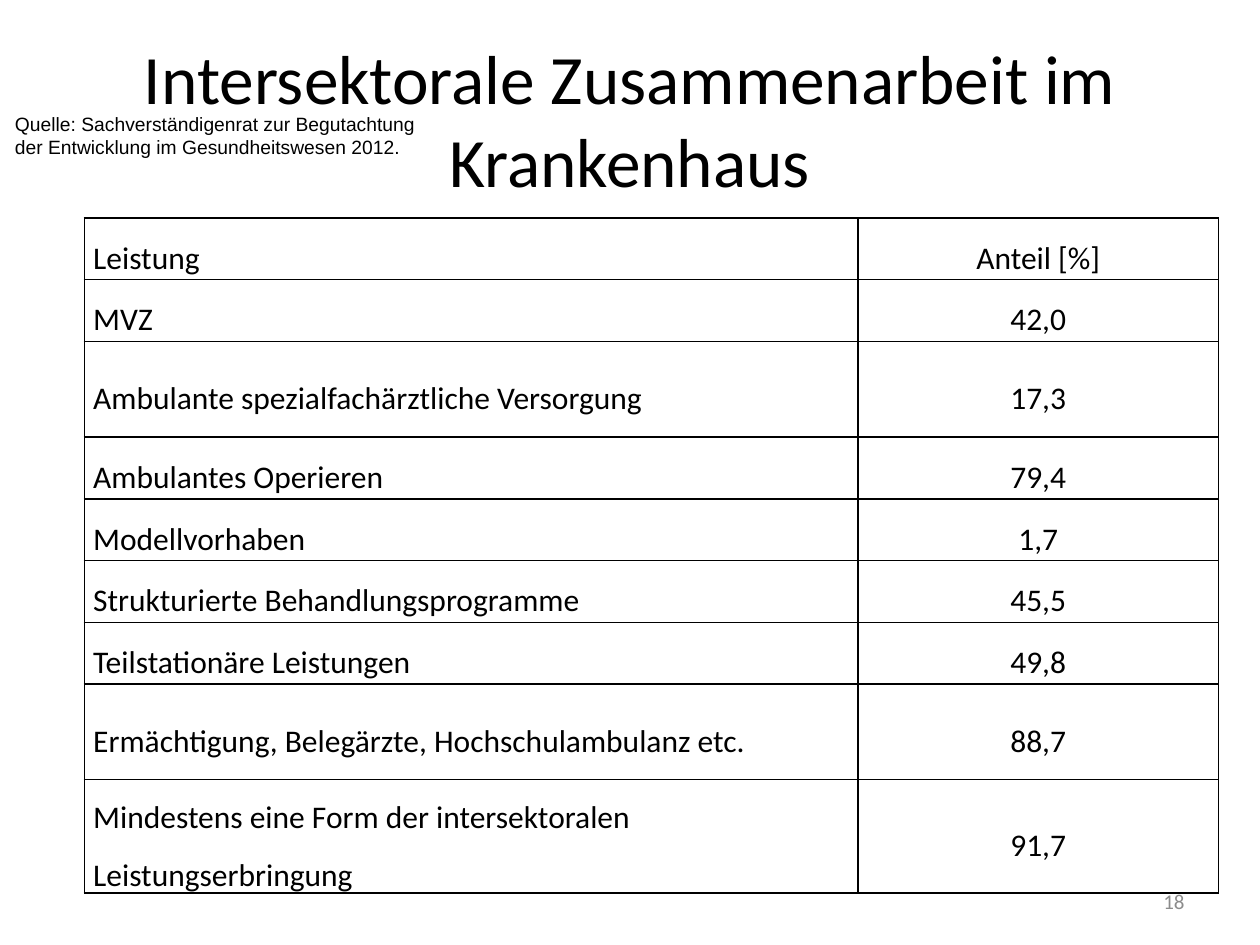
from lxml import etree
from pptx import Presentation
from pptx.dml.color import RGBColor
from pptx.enum.text import MSO_ANCHOR, PP_ALIGN
from pptx.oxml.ns import qn
from pptx.util import Inches, Pt

LEFT, MID, RIGHT = PP_ALIGN.LEFT, PP_ALIGN.CENTER, PP_ALIGN.RIGHT
TOP, CENTRE = MSO_ANCHOR.TOP, MSO_ANCHOR.MIDDLE
COLORS = {"ink": "000000", "grey": "8C8C8C"}

deck = Presentation()
deck.slide_width, deck.slide_height = Inches(10), Inches(7.5)
W, H = deck.slide_width, deck.slide_height
slide = deck.slides.add_slide(deck.slide_layouts[6])


def style(para, size, align, face="Calibri", color="ink"):
    para.alignment = align
    para.font.size = Pt(size)
    para.font.name = face
    para.font.color.rgb = RGBColor.from_string(COLORS[color])


def label(text, box, anchor, *look):
    """Add a text box; box is given in shares of the slide's size."""
    x, y, w, h = box
    frame = slide.shapes.add_textbox(
        int(x * W), int(y * H), int(w * W), int(h * H)).text_frame
    frame.word_wrap = True
    frame.vertical_anchor = anchor
    frame.text = text
    style(frame.paragraphs[0], *look)


# Title
label("Intersektorale Zusammenarbeit im Krankenhaus",
      (0.05, 0.04, 0.9, 0.17), CENTRE, 39.6, MID)

# Table of services and their shares
ROWS = [
    ("Leistung", "Anteil [%]"),
    ("MVZ", "42,0"),
    ("Ambulante spezialfachärztliche Versorgung", "17,3"),
    ("Ambulantes Operieren", "79,4"),
    ("Modellvorhaben", "1,7"),
    ("Strukturierte Behandlungsprogramme", "45,5"),
    ("Teilstationäre Leistungen", "49,8"),
    ("Ermächtigung, Belegärzte, Hochschulambulanz etc.", "88,7"),
    ("Mindestens eine Form der intersektoralen Leistungserbringung", "91,7"),
]
LOW, TALL = Inches(0.49), Inches(0.76)
WIDE = 40  # names longer than this get a tall row

heights = [TALL if len(name) > WIDE else LOW for name, _ in ROWS]
table = slide.shapes.add_table(
    len(ROWS), 2, Inches(0.67), Inches(1.73), Inches(9), sum(heights)).table
table.first_row = table.horz_banding = False
for col, width in zip(table.columns, (6.14, 2.86)):
    col.width = Inches(width)

for r, row in enumerate(ROWS):
    table.rows[r].height = heights[r]
    for c, text in enumerate(row):
        cell = table.cell(r, c)
        cell.text = text
        cell.vertical_anchor = CENTRE
        cell.margin_left = cell.margin_right = Inches(0.07)
        cell.margin_top = cell.margin_bottom = 0
        para = cell.text_frame.paragraphs[0]
        para.line_spacing = 1.5
        para.space_before = para.space_after = Pt(6)
        style(para, 18, MID if c else LEFT)
        # Borders come before the fill in the cell's properties
        props = cell._tc.get_or_add_tcPr()
        for side in ("a:lnL", "a:lnR", "a:lnT", "a:lnB"):
            line = etree.SubElement(props, qn(side), w=str(Pt(1)))
            fill = etree.SubElement(line, qn("a:solidFill"))
            etree.SubElement(fill, qn("a:srgbClr"), val=COLORS["ink"])
        cell.fill.background()

# Page number and source note
label("18", (0.717, 0.927, 0.233, 0.053), CENTRE, 12, RIGHT, "Calibri", "grey")
label("Quelle: Sachverständigenrat zur Begutachtung der Entwicklung "
      "im Gesundheitswesen 2012.",
      (0.002, 0.112, 0.349, 0.09), TOP, 11, LEFT, "Arial")

deck.save("out.pptx")
